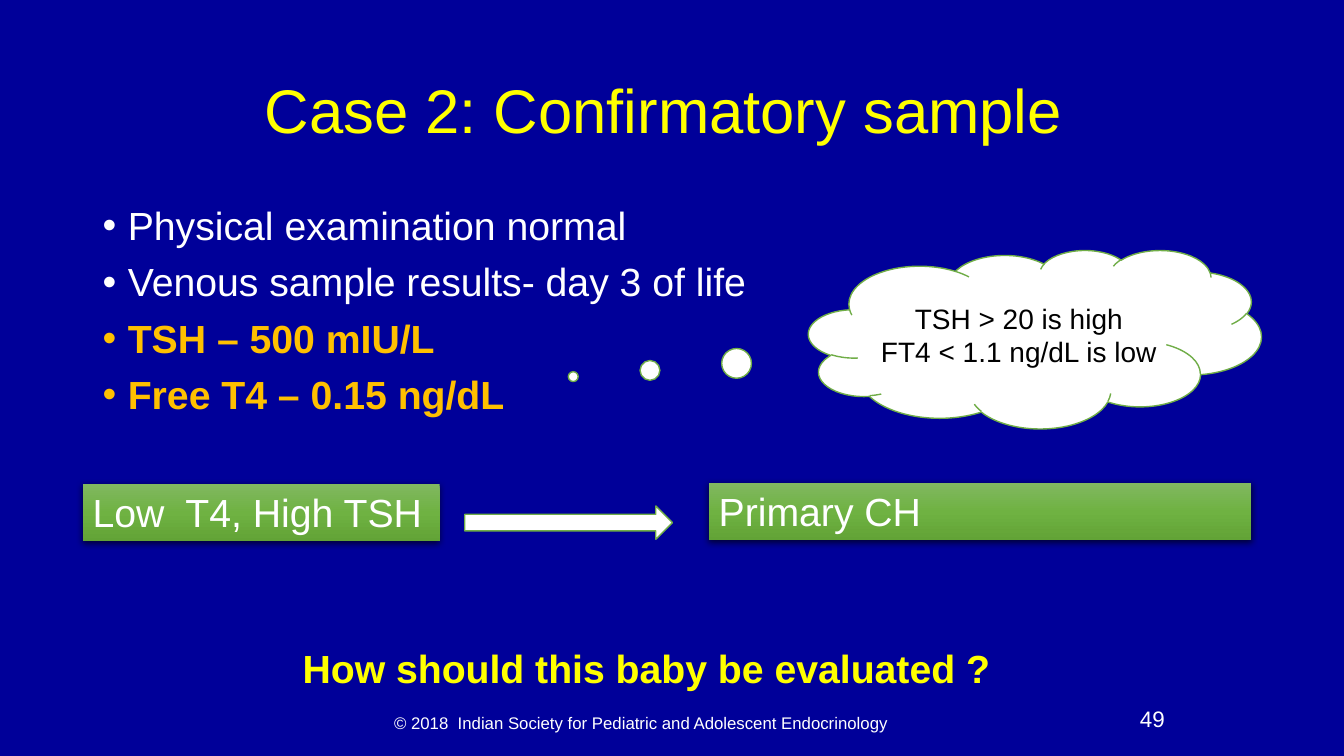
from pptx import Presentation
from pptx import util as u
from pptx.dml.color import RGBColor
from pptx.enum import shapes, text
from pptx.oxml import parse_xml
from pptx.oxml.ns import nsdecls, qn

FONT = "Arial"
WHITE, BLACK, YELLOW, AMBER = "FFFFFF", "000000", "FFFF00", "FFC000"
NAVY, GREEN = "000099", "70AD47"
GREEN_STOPS = [(0, "81B861"), (50, "6FB242"), (100, "62A336")]
SHAPE = shapes.MSO_SHAPE
CENTER, LEFT = text.PP_ALIGN.CENTER, text.PP_ALIGN.LEFT
TOP, MIDDLE = text.MSO_ANCHOR.TOP, text.MSO_ANCHOR.MIDDLE


def rgb(value):
    return RGBColor.from_string(value)


def add_bullet(para):
    props = para._p.get_or_add_pPr()
    props.set("marL", str(u.Inches(0.25)))
    props.set("indent", str(-u.Inches(0.25)))
    props.append(parse_xml(f'<a:buFont {nsdecls("a")} typeface="{FONT}"/>'))
    props.append(parse_xml(f'<a:buChar {nsdecls("a")} char="•"/>'))


def write(shape, lines, size=28, color=WHITE, bold=False, align=LEFT,
          anchor=TOP, spacing=None, before=0, bullet=False, wrap=True):
    """Fill a shape with lines; a line is a string or (string, color, bold)."""
    frame = shape.text_frame
    frame.word_wrap = wrap
    frame.vertical_anchor = anchor
    for index, line in enumerate(lines):
        words, tint, heavy = (line, color, bold) if isinstance(line, str) else line
        para = frame.paragraphs[0] if index == 0 else frame.add_paragraph()
        if bullet:
            add_bullet(para)
        para.alignment = align
        if spacing:
            para.line_spacing = spacing
        if before and index:
            para.space_before = u.Pt(before)
        span = para.add_run()
        span.text = words
        span.font.name = FONT
        span.font.size = u.Pt(size)
        span.font.bold = heavy
        span.font.color.rgb = rgb(tint)


def add_text(page, at, lines, **style):
    box = page.shapes.add_textbox(*map(u.Inches, at))
    write(box, lines, **style)


def add_outlined(page, kind, at):
    """Add a white shape with a thin green outline."""
    shape = page.shapes.add_shape(kind, *map(u.Inches, at))
    shape.shadow.inherit = False
    shape.fill.solid()
    shape.fill.fore_color.rgb = rgb(WHITE)
    shape.line.color.rgb = rgb(GREEN)
    shape.line.width = u.Pt(1)
    return shape


def add_finding(page, at, label):
    """Add a green gradient bar with a soft shadow below it."""
    bar = page.shapes.add_shape(SHAPE.RECTANGLE, *map(u.Inches, at))
    bar.line.fill.background()
    bar.shadow.inherit = False
    props = bar._element.spPr
    stops = "".join(f'<a:gs pos="{place * 1000}"><a:srgbClr val="{color}"/></a:gs>'
                    for place, color in GREEN_STOPS)
    props.find(qn("a:prstGeom")).addnext(parse_xml(
        f'<a:gradFill {nsdecls("a")} rotWithShape="1"><a:gsLst>{stops}</a:gsLst>'
        '<a:lin ang="5400000" scaled="0"/></a:gradFill>'))
    props.find(qn("a:effectLst")).append(parse_xml(
        f'<a:outerShdw {nsdecls("a")} blurRad="{u.Pt(4.5)}" dist="{u.Pt(1.5)}" '
        f'dir="5400000" algn="ctr" rotWithShape="0"><a:srgbClr val="{BLACK}">'
        '<a:alpha val="63000"/></a:srgbClr></a:outerShdw>'))
    write(bar, [label])


def main():
    deck = Presentation()
    deck.slide_width, deck.slide_height = u.Inches(13.33), u.Inches(7.5)
    page = deck.slides.add_slide(deck.slide_layouts[6])
    page.background.fill.solid()
    page.background.fill.fore_color.rgb = rgb(NAVY)

    add_text(page, (0.92, 0.4, 11.5, 1.45), ["Case 2: Confirmatory sample "],
             size=44, color=YELLOW, align=CENTER, anchor=MIDDLE, spacing=0.9)
    add_text(page, (0.92, 2, 11.5, 4.76),
             ["Physical examination normal",
              "Venous sample results- day 3 of life",
              ("TSH – 500 mIU/L", AMBER, True),
              ("Free T4 – 0.15 ng/dL", AMBER, True)],
             spacing=0.9, before=10, bullet=True)

    cloud = add_outlined(page, SHAPE.CLOUD_CALLOUT, (8.02, 2.48, 4.49, 1.77))
    cloud.adjustments[0], cloud.adjustments[1] = -1.02, 0.21
    write(cloud, ["TSH > 20 is high", "FT4 < 1.1 ng/dL is low "],
          size=20, color=BLACK, align=CENTER, anchor=MIDDLE)

    add_finding(page, (0.82, 4.8, 3.54, 0.57), "Low  T4, High TSH")
    add_finding(page, (7.03, 4.79, 5.38, 0.57), "Primary CH")
    add_outlined(page, SHAPE.RIGHT_ARROW, (4.61, 5.02, 2.06, 0.33))

    add_text(page, (2.86, 6.34, 7.21, 0.57), ["How should this baby be evaluated ? "],
             color=YELLOW, bold=True, align=CENTER, wrap=False)
    add_text(page, (3.77, 6.95, 5.18, 0.45),
             ["© 2018  Indian Society for Pediatric and Adolescent Endocrinology"],
             size=12, align=CENTER, anchor=MIDDLE)
    add_text(page, (9.93, 6.95, 3, 0.4), ["49"], size=16, align=CENTER)

    deck.save("out.pptx")


if __name__ == "__main__":
    main()
